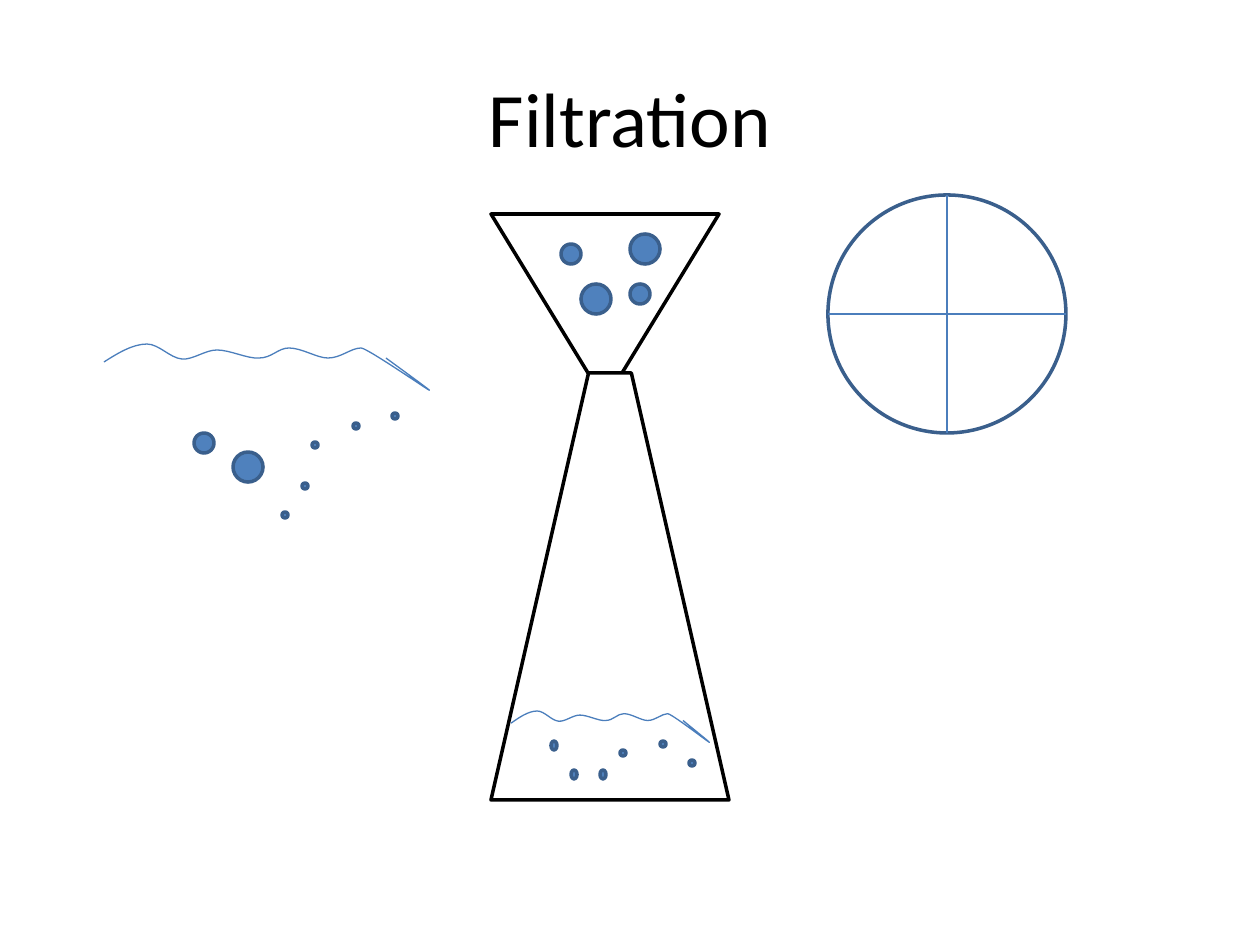
import pptx
import pptx.util
import pptx.dml.color
import pptx.enum.shapes
import pptx.enum.text
import pptx.oxml
import pptx.oxml.ns

UNIT = 914400 / 126
KIND = pptx.enum.shapes.MSO_SHAPE
HUE = {"ink": "000000", "white": "FFFFFF", "blue": "4F81BD",
       "edge": "3A5F8C", "wave": "4B7EBC"}
GRAINS = [
    (KIND.OVAL, 30, 30, [(630, 234), (581, 284), (233, 452)]),
    (KIND.OVAL, 20, 20, [(630, 284), (561, 244), (194, 433)]),
    (KIND.FLOWCHART_CONNECTOR, 6, 6,
     [(660, 741), (689, 760), (620, 750), (312, 442), (353, 423),
      (282, 512), (302, 483), (392, 413)]),
    (KIND.FLOWCHART_CONNECTOR, 6, 9, [(551, 741), (571, 770), (600, 770)]),
]
START = (0, 18)
CURVE = [
    (14, 9), (29, 0), (43, 0),
    (55, 0), (66, 14), (78, 15),
    (89, 16), (101, 6), (113, 6),
    (126, 6), (144, 15), (155, 14),
    (168, 14), (174, 4), (185, 4),
    (198, 4), (213, 14), (224, 14),
    (237, 14), (247, 4), (257, 4),
    (266, 4), (389, 92), (282, 14),
]


def px(num):
    return pptx.util.Emu(round(num * UNIT))


def tint(name):
    return pptx.dml.color.RGBColor.from_string(HUE[name])


def stroke(item, name, width):
    item.line.color.rgb = tint(name)
    item.line.width = pptx.util.Pt(width)


def add_shape(slide, kind, box, fill, edge):
    shape = slide.shapes.add_shape(kind, *map(px, box))
    shape.shadow.inherit = False
    shape.fill.solid()
    shape.fill.fore_color.rgb = tint(fill)
    stroke(shape, edge, 2)
    return shape


def add_flask(slide, box, inset, turn=0):
    flask = add_shape(slide, KIND.TRAPEZOID, box, "white", "ink")
    flask.adjustments[0] = inset
    flask.rotation = turn


def add_wave(slide, left, top, wide=1, high=1):
    pen = slide.shapes.build_freeform(*START, scale=(UNIT * wide, UNIT * high))
    pen.add_line_segments(CURVE, close=False)
    wave = pen.convert_to_shape(px(left), px(top))
    wave.shadow.inherit = False
    wave.fill.background()
    stroke(wave, "wave", 0.75)
    name = pptx.oxml.ns.qn
    lines = list(wave._element.iter(name("a:lnTo")))
    for i in range(0, len(lines), 3):
        bend = lines[i].getparent().makeelement(name("a:cubicBezTo"), {})
        lines[i].addprevious(bend)
        for line in lines[i:i + 3]:
            bend.append(line[0])
            line.getparent().remove(line)


def add_line(slide, *ends):
    line = slide.shapes.add_connector(
        pptx.enum.shapes.MSO_CONNECTOR.STRAIGHT, *map(px, ends))
    stroke(line, "wave", 0.75)
    pptx.oxml.ns.qn
    props = line._element.spPr
    props.append(props.makeelement(pptx.oxml.ns.qn("a:effectLst"), {}))


def add_title(slide, text, box):
    frame = slide.shapes.add_textbox(*map(px, box)).text_frame
    frame.word_wrap = True
    frame.vertical_anchor = pptx.enum.text.MSO_ANCHOR.MIDDLE
    para = frame.paragraphs[0]
    para.alignment = pptx.enum.text.PP_ALIGN.CENTER
    run = para.add_run()
    run.text = text
    run.font.name = "Calibri"
    run.font.size = pptx.util.Pt(44)
    run.font.color.rgb = tint("ink")


def add_disc(slide, left, top, size):
    add_shape(slide, KIND.FLOWCHART_CONNECTOR, (left, top, size, size),
              "white", "edge")
    half = size / 2
    add_line(slide, left + half, top, left + half, top + size)
    add_line(slide, left, top + half, left + size, top + half)


def main():
    deck = pptx.Presentation()
    deck.slide_width, deck.slide_height = px(1260), px(945)
    slide = deck.slides.add_slide(deck.slide_layouts[6])
    add_flask(slide, (491, 214, 228, 159), 0.61, 180)
    add_title(slide, "Filtration", (63, 38, 1134, 158))
    add_flask(slide, (491, 373, 238, 427), 0.41)
    add_wave(slide, 511, 711, 0.61, 0.68)
    for kind, wide, high, spots in GRAINS:
        for left, top in spots:
            add_shape(slide, kind, (left, top, wide, high), "blue", "edge")
    add_wave(slide, 104, 344)
    add_disc(slide, 828, 195, 238)
    deck.save("out.pptx")


if __name__ == "__main__":
    main()
